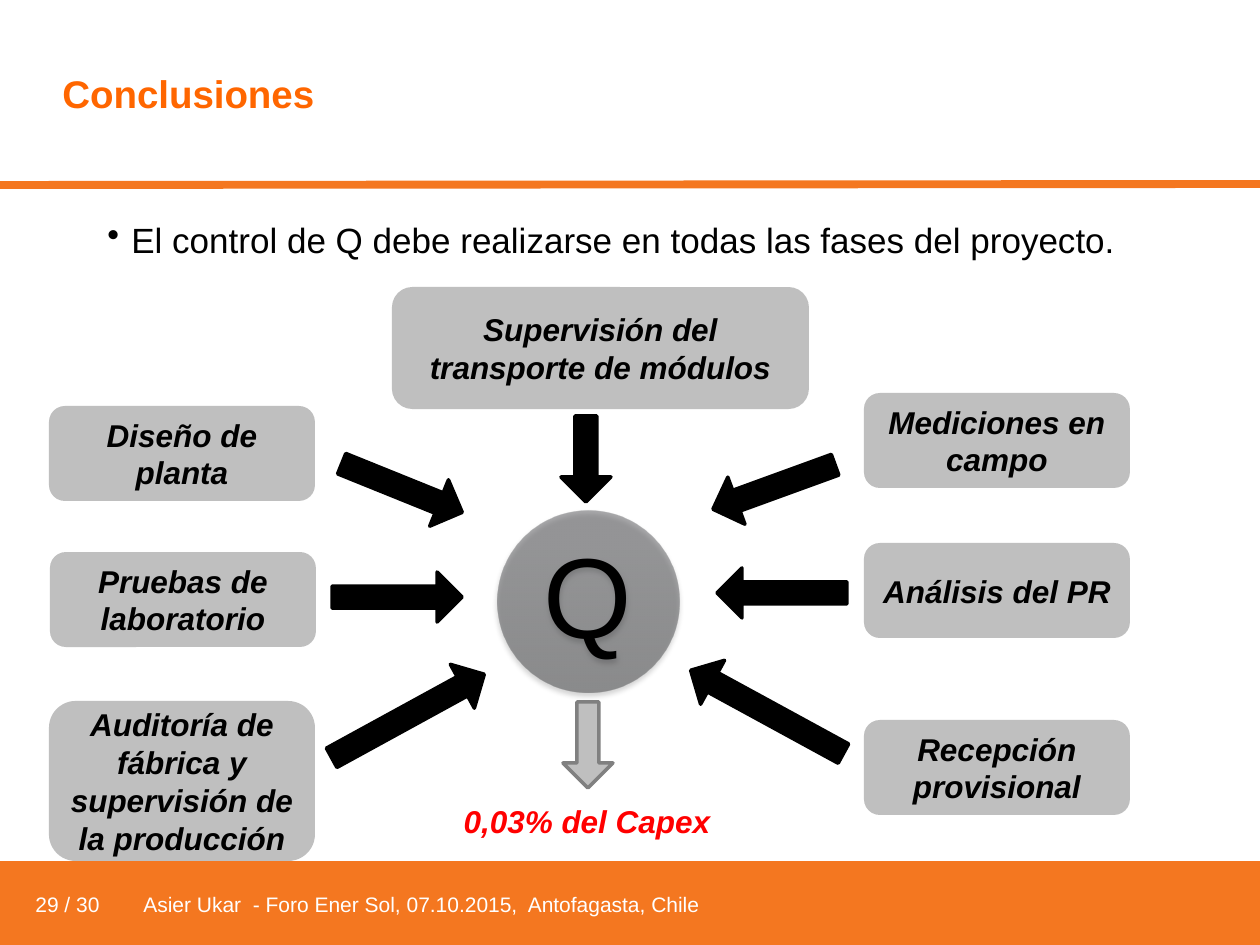
import pptx
import pptx.dml.color
import pptx.enum.shapes
import pptx.enum.text
import pptx.oxml
import pptx.oxml.ns
import pptx.util

PX = 914400 / 126
MAIN = "http://schemas.openxmlformats.org/drawingml/2006/main"
SHAPES = pptx.enum.shapes.MSO_SHAPE
CENTER = pptx.enum.text.PP_ALIGN.CENTER
LEFT = pptx.enum.text.PP_ALIGN.LEFT
MIDDLE = pptx.enum.text.MSO_ANCHOR.MIDDLE
TOP = pptx.enum.text.MSO_ANCHOR.TOP
ORANGE, GRAY, BLACK = "F47720", "BFBFBF", "000000"
LABEL = {"size": 18, "color": BLACK, "bold": True, "italic": True}

presentation = pptx.Presentation()
presentation.slide_width = round(1260 * PX)
presentation.slide_height = round(945 * PX)
slide = presentation.slides.add_slide(presentation.slide_layouts[6])


def add_item(kind, box, fill=None, line=None, rotation=0):
    """Add a preset shape, or a text box when kind is None; box is in px."""
    lengths = [round(value * PX) for value in box]
    if kind is None:
        return slide.shapes.add_textbox(*lengths)
    shape = slide.shapes.add_shape(kind, *lengths)
    shape.shadow.inherit = False
    shape.rotation = rotation
    if fill:
        shape.fill.solid()
        shape.fill.fore_color.rgb = pptx.dml.color.RGBColor.from_string(fill)
    if line:
        shape.line.color.rgb = pptx.dml.color.RGBColor.from_string(line)
        shape.line.width = pptx.util.Pt(2)
    else:
        shape.line.fill.background()
    return shape


def write(shape, text, style, align=CENTER, anchor=MIDDLE):
    frame = shape.text_frame
    frame.word_wrap = True
    frame.vertical_anchor = anchor
    paragraph = frame.paragraphs[0]
    paragraph.alignment = align
    run = paragraph.add_run()
    run.text = text
    run.font.name = "Arial"
    for name, value in style.items():
        if name == "color":
            run.font.color.rgb = pptx.dml.color.RGBColor.from_string(value)
        else:
            setattr(run.font, name, pptx.util.Pt(value) if name == "size" else value)
    return paragraph


# Footer and header rule
add_item(SHAPES.RECTANGLE, (0, 861, 1260, 84), ORANGE)
footer = write(add_item(None, (23, 885, 808, 38)),
               "29 / 30\tAsier Ukar  - Foro Ener Sol, 07.10.2015,  Antofagasta, Chile",
               {"size": 12, "color": "FFFFFF"}, LEFT, TOP)
footer._p.get_or_add_pPr().append(pptx.oxml.parse_xml(
    f'<a:tabLst xmlns:a="{MAIN}"><a:tab pos="{round(108 * PX)}" algn="l"/></a:tabLst>'))

rule = slide.shapes.add_connector(pptx.enum.shapes.MSO_CONNECTOR.STRAIGHT,
                                  round(1260 * PX), round(184 * PX), 0, round(185 * PX))
rule.line.color.rgb = pptx.dml.color.RGBColor.from_string(ORANGE)
rule.line.width = pptx.util.Pt(4.5)
rule._element.spPr.append(pptx.oxml.parse_xml(f'<a:effectLst xmlns:a="{MAIN}"/>'))

# Title, bullet and result
write(add_item(None, (50, 64, 974, 98)), "Conclusiones",
      {"size": 22, "color": "FF6600", "bold": True}, LEFT, TOP)
bullet = write(add_item(None, (95, 212, 1071, 62)),
               "El control de Q debe realizarse en todas las fases del proyecto.",
               {"size": 20, "color": BLACK}, LEFT, TOP)
properties = bullet._p.get_or_add_pPr()
properties.set("marL", str(round(24 * PX)))
properties.set("indent", str(round(-24 * PX)))
properties.append(pptx.oxml.parse_xml(f'<a:buChar xmlns:a="{MAIN}" char="•"/>'))
write(add_item(None, (431, 780, 312, 81)), "0,03% del Capex", {**LABEL, "color": "FF0000"})

# Project phases around the centre
phases = [
    ("Auditoría de fábrica y supervisión de la producción", (49, 701, 266, 160)),
    ("Pruebas de laboratorio", (50, 552, 266, 95)),
    ("Diseño de planta", (49, 406, 266, 95)),
    ("Supervisión del transporte de módulos", (392, 287, 417, 122)),
    ("Mediciones en campo", (864, 393, 266, 95)),
    ("Análisis del PR", (864, 543, 266, 95)),
    ("Recepción provisional", (864, 720, 266, 95)),
]
for text, box in phases:
    write(add_item(SHAPES.ROUNDED_RECTANGLE, box, GRAY), text, LABEL)

# Central quality circle
circle = add_item(SHAPES.OVAL, (497, 511, 182, 182))
circle.fill.gradient()
circle.fill.gradient_angle = 90
for stop, color, position in zip(circle.fill.gradient_stops, ("414244", "555659"), (0, 0.8)):
    stop.color.rgb = pptx.dml.color.RGBColor.from_string(color)
    stop.position = position
for color in circle._element.spPr.iter(pptx.oxml.ns.qn("a:srgbClr")):
    color.append(pptx.oxml.parse_xml(f'<a:alpha xmlns:a="{MAIN}" val="50000"/>'))
circle._element.spPr.find(pptx.oxml.ns.qn("a:effectLst")).append(pptx.oxml.parse_xml(
    f'<a:outerShdw xmlns:a="{MAIN}" blurRad="{pptx.util.Pt(3.1)}" dist="{pptx.util.Pt(1.8)}" '
    'dir="5400000" rotWithShape="0"><a:srgbClr val="000000"><a:alpha val="35000"/>'
    '</a:srgbClr></a:outerShdw>'))
for side in ("left", "top", "right", "bottom"):
    setattr(circle.text_frame, f"margin_{side}", 0)
write(circle, "Q", {"size": 65, "color": BLACK}).line_spacing = 0.9

# Arrows: left, top, length, rotation, fill, line
arrows = [
    (377, 423, 130, 292, BLACK, BLACK),
    (372, 532, 130, 270, BLACK, BLACK),
    (757, 528, 130, 90, BLACK, BLACK),
    (749, 422, 130, 70, BLACK, BLACK),
    (561, 416, 86, 0, BLACK, BLACK),
    (383, 629, 174, 241.3, BLACK, BLACK),
    (742, 625, 174, 118.6, BLACK, BLACK),
    (563, 702, 86, 0, GRAY, "808080"),
]
for left, top, length, rotation, fill, line in arrows:
    arrow = add_item(SHAPES.DOWN_ARROW, (left, top, 50, length), fill, line, rotation)
    arrow.adjustments[0] = 0.44
    arrow.adjustments[1] = 0.5

presentation.save("out.pptx")
